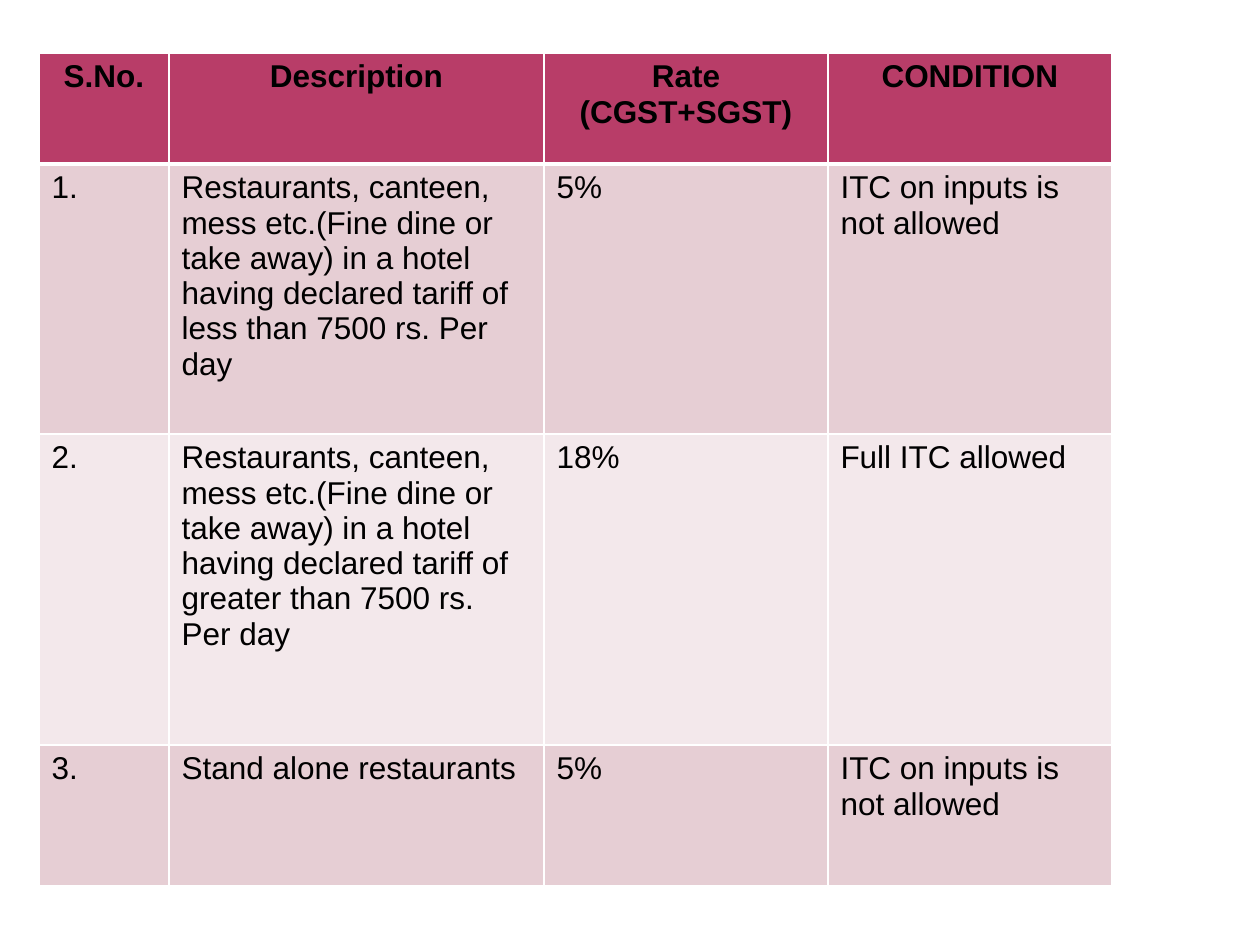
from lxml.etree import SubElement
from pptx import Presentation
from pptx.dml.color import RGBColor
from pptx.enum.text import PP_ALIGN as Align
from pptx.oxml.ns import qn
from pptx.util import Emu, Pt

PX_PER_INCH = 126
COLORS = {
    "header": "B83D68",
    "odd_row": "E6CED4",
    "even_row": "F3E8EB",
    "border": "FFFFFF",
    "text": "000000",
}

COLUMN_WIDTHS = [130, 375, 284, 284]
ROW_HEIGHTS = [111, 270, 311, 141]
HOTEL = ("Restaurants, canteen, mess etc.(Fine dine or take away) in a hotel "
         "having declared tariff of {} than 7500 rs. Per day")
ROWS = [
    ("S.No.", "Description", "Rate (CGST+SGST)", "CONDITION"),
    ("1.", HOTEL.format("less"), "5%", "ITC on inputs is not allowed"),
    ("2.", HOTEL.format("greater"), "18%", "Full ITC allowed"),
    ("3.", "Stand alone restaurants", "5%", "ITC on inputs is not allowed"),
]


def px(length):
    return Emu(round(length * 914400 / PX_PER_INCH))


def color(name):
    return RGBColor.from_string(COLORS[name])


def write_text(text_frame, text, size=18, bold=False, align=Align.LEFT):
    paragraph = text_frame.paragraphs[0]
    paragraph.alignment = align
    run = paragraph.add_run()
    run.text = text
    run.font.name = "Arial"
    run.font.size = Pt(size)
    run.font.bold = bold
    run.font.color.rgb = color("text")


def set_borders(cell, top=1, bottom=1):
    properties = cell._tc.get_or_add_tcPr()
    for side, width in (("L", 1), ("R", 1), ("T", top), ("B", bottom)):
        line = SubElement(properties, qn(f"a:ln{side}"), w=str(Pt(width)))
        fill = SubElement(line, qn("a:solidFill"))
        SubElement(fill, qn("a:srgbClr"), val=COLORS["border"])


def add_rate_table(slide, left, top):
    shape = slide.shapes.add_table(
        len(ROWS), len(COLUMN_WIDTHS), px(left), px(top),
        px(sum(COLUMN_WIDTHS)), px(sum(ROW_HEIGHTS)))
    table = shape.table
    for column, width in zip(table.columns, COLUMN_WIDTHS):
        column.width = px(width)

    for index, (row, height, texts) in enumerate(zip(table.rows, ROW_HEIGHTS, ROWS)):
        row.height = px(height)
        is_header = index == 0
        fill_name = "header" if is_header else "odd_row" if index % 2 else "even_row"
        for cell, text in zip(row.cells, texts):
            # A thick rule separates the header from the body
            set_borders(cell, top=3 if index == 1 else 1, bottom=3 if is_header else 1)
            cell.fill.solid()
            cell.fill.fore_color.rgb = color(fill_name)
            write_text(cell.text_frame, text, bold=is_header,
                       align=Align.CENTER if is_header else Align.LEFT)


def main():
    presentation = Presentation()
    presentation.slide_width = px(1260)
    presentation.slide_height = px(945)
    # Blank layout: the slide has no title
    slide = presentation.slides.add_slide(presentation.slide_layouts[6])
    add_rate_table(slide, left=39, top=53)
    presentation.save("out.pptx")


if __name__ == "__main__":
    main()
